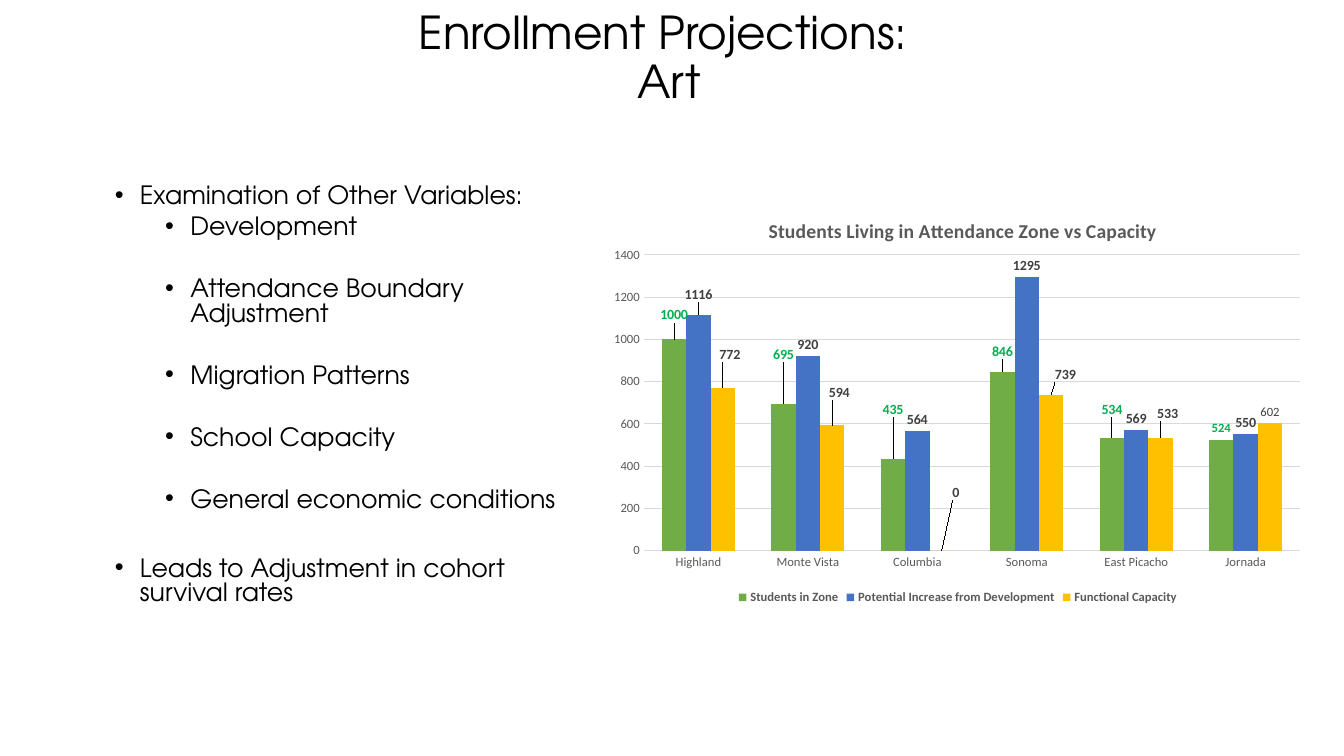
from dataclasses import dataclass

import lxml.etree
import pptx
import pptx.chart.data
import pptx.dml.color
import pptx.enum.chart
import pptx.enum.text
import pptx.oxml.ns
import pptx.util

BLACK = pptx.dml.color.RGBColor(0x00, 0x00, 0x00)
GRAY = pptx.dml.color.RGBColor(0x59, 0x59, 0x59)
DARK_GRAY = pptx.dml.color.RGBColor(0x40, 0x40, 0x40)
GRID_GRAY = pptx.dml.color.RGBColor(0xD9, 0xD9, 0xD9)
LABEL_GREEN = pptx.dml.color.RGBColor(0x00, 0xB0, 0x50)
GREEN = pptx.dml.color.RGBColor(0x70, 0xAD, 0x47)
BLUE = pptx.dml.color.RGBColor(0x44, 0x72, 0xC4)
GOLD = pptx.dml.color.RGBColor(0xFF, 0xC0, 0x00)

TEXT_FONT = "TeX Gyre Adventor"
CHART_FONT = "Calibri"
SLIDE_WIDTH = pptx.util.Inches(13.33)
SLIDE_HEIGHT = pptx.util.Inches(7.5)


@dataclass(frozen=True)
class Area:
    """A rectangle in percent of the slide's width and height."""
    left: float
    top: float
    width: float
    height: float

    def box(self) -> tuple[int, int, int, int]:
        return (int(SLIDE_WIDTH * self.left / 100), int(SLIDE_HEIGHT * self.top / 100),
                int(SLIDE_WIDTH * self.width / 100), int(SLIDE_HEIGHT * self.height / 100))


@dataclass(frozen=True)
class Bullet:
    text: str
    level: int
    space_before: float


@dataclass(frozen=True)
class ColumnSeries:
    """A series; label_shifts holds x and y shares of the chart for its first points."""
    name: str
    values: tuple[int, ...]
    color: pptx.dml.color.RGBColor
    label_color: pptx.dml.color.RGBColor
    label_size: float
    label_bold: bool
    label_shifts: tuple[tuple[float, float], ...]


TITLE_AREA = Area(3.75, 2.53, 92.12, 10.53)
BODY_AREA = Area(7.8, 23.87, 36.91, 58.27)
CHART_AREA = Area(44.71, 25.47, 53.11, 55.07)

TITLE_LINES = ("Enrollment Projections: ", "Art")
BULLETS = (
    Bullet("Examination of Other Variables:", 0, 0),
    Bullet("Development", 1, 5),
    Bullet("Attendance Boundary Adjustment", 1, 27),
    Bullet("Migration Patterns", 1, 27),
    Bullet("School Capacity", 1, 27),
    Bullet("General economic conditions", 1, 27),
    Bullet("Leads to Adjustment in cohort survival rates", 0, 32),
)
BULLET_INDENT = pptx.util.Inches(0.25)
LEVEL_INDENT = pptx.util.Inches(0.5)

SCHOOLS = ("Highland", "Monte Vista", "Columbia", "Sonoma", "East Picacho", "Jornada")
SERIES = (
    ColumnSeries("Students in Zone", (1000, 695, 435, 846, 534, 524), GREEN, LABEL_GREEN, 9, True,
                 ((0, -0.03), (0, -0.09), (0, -0.09), (0, -0.02), (0, -0.04))),
    ColumnSeries("Potential Increase from Development", (1116, 920, 564, 1295, 569, 550),
                 BLUE, DARK_GRAY, 10, True, ((0, -0.02),)),
    ColumnSeries("Functional Capacity", (772, 594, 0, 739, 533, 602), GOLD, DARK_GRAY, 9, False,
                 ((0.01, -0.05), (0.01, -0.05), (0.02, -0.11), (0.02, -0.02), (0.01, -0.03))),
)


def style_font(font, name: str, size: float, color, bold: bool = False) -> None:
    font.name = name
    font.size = pptx.util.Pt(size)
    font.bold = bold
    font.color.rgb = color


def add_text_frame(slide, area: Area, anchor):
    text_frame = slide.shapes.add_textbox(*area.box()).text_frame
    text_frame.word_wrap = True
    text_frame.vertical_anchor = anchor
    return text_frame


def add_title(slide) -> None:
    text_frame = add_text_frame(slide, TITLE_AREA, pptx.enum.text.MSO_ANCHOR.MIDDLE)
    paragraph = text_frame.paragraphs[0]
    paragraph.alignment = pptx.enum.text.PP_ALIGN.CENTER
    paragraph.line_spacing = 0.9
    for number, line in enumerate(TITLE_LINES):
        if number:
            paragraph.add_line_break()
        run = paragraph.add_run()
        run.text = line
        style_font(run.font, TEXT_FONT, 32.4, BLACK)


def add_bullets(slide) -> None:
    text_frame = add_text_frame(slide, BODY_AREA, pptx.enum.text.MSO_ANCHOR.TOP)
    for number, bullet in enumerate(BULLETS):
        paragraph = text_frame.add_paragraph() if number else text_frame.paragraphs[0]
        paragraph.level = bullet.level
        paragraph.line_spacing = 0.8
        paragraph.space_before = pptx.util.Pt(bullet.space_before)
        properties = paragraph._p.get_or_add_pPr()
        properties.set("marL", str(BULLET_INDENT + bullet.level * LEVEL_INDENT))
        properties.set("indent", str(-BULLET_INDENT))
        for tag, attribute, value in (("a:buFont", "typeface", "Arial"), ("a:buChar", "char", "•")):
            lxml.etree.SubElement(properties, pptx.oxml.ns.qn(tag)).set(attribute, value)
        run = paragraph.add_run()
        run.text = bullet.text
        style_font(run.font, TEXT_FONT, 18, BLACK)


def set_layout(element, index: int, **settings) -> None:
    """Give a chart element a manual layout, as its child at the index."""
    qn = pptx.oxml.ns.qn
    for old_layout in element.findall(qn("c:layout")):
        element.remove(old_layout)
    layout = lxml.etree.Element(qn("c:layout"))
    manual = lxml.etree.SubElement(layout, qn("c:manualLayout"))
    for name, value in settings.items():
        lxml.etree.SubElement(manual, qn(f"c:{name}")).set("val", str(value))
    element.insert(index, layout)


def style_series(series, design: ColumnSeries) -> None:
    series.format.fill.solid()
    series.format.fill.fore_color.rgb = design.color
    outside = pptx.enum.chart.XL_LABEL_POSITION.OUTSIDE_END
    labels = series.data_labels
    labels.show_value = True
    labels.position = outside
    style_font(labels.font, CHART_FONT, design.label_size, design.label_color, design.label_bold)
    for index, (x, y) in enumerate(design.label_shifts):
        label = series.points[index].data_label
        style_font(label.font, CHART_FONT, 10, design.label_color, True)
        label.position = outside
        label_element = series._element.xpath(f"c:dLbls/c:dLbl[c:idx/@val='{index}']")[0]
        set_layout(label_element, 1, x=x, y=y)


def style_axes(chart) -> None:
    for axis in (chart.category_axis, chart.value_axis):
        axis.major_tick_mark = pptx.enum.chart.XL_TICK_MARK.NONE
        axis.minor_tick_mark = pptx.enum.chart.XL_TICK_MARK.NONE
        axis.format.line.fill.background()
        style_font(axis.tick_labels.font, CHART_FONT, 9, GRAY)
    chart.value_axis.minimum_scale = 0
    chart.value_axis.maximum_scale = 1400
    chart.value_axis.major_unit = 200
    grid_line = chart.value_axis.major_gridlines.format.line
    grid_line.color.rgb = GRID_GRAY
    grid_line.width = pptx.util.Pt(0.75)


def add_enrollment_chart(slide) -> None:
    data = pptx.chart.data.CategoryChartData()
    data.categories = SCHOOLS
    for design in SERIES:
        data.add_series(design.name, design.values)
    chart = slide.shapes.add_chart(
        pptx.enum.chart.XL_CHART_TYPE.COLUMN_CLUSTERED, *CHART_AREA.box(), data).chart
    style_font(chart.font, CHART_FONT, 10, BLACK)
    plot = chart.plots[0]
    plot.gap_width = 150
    plot.overlap = 0
    plot.vary_by_categories = False
    for series, design in zip(plot.series, SERIES):
        style_series(series, design)
    style_axes(chart)

    run = chart.chart_title.text_frame.paragraphs[0].add_run()
    run.text = "Students Living in Attendance Zone vs Capacity"
    style_font(run.font, CHART_FONT, 14, GRAY, True)
    set_layout(chart.element.xpath("c:chart/c:title")[0], 1,
               xMode="edge", yMode="edge", x=0.23, y=0.05)
    set_layout(chart.element.xpath("c:chart/c:plotArea")[0], 0, layoutTarget="inner",
               xMode="edge", yMode="edge", x=0.06, y=0.15, w=0.92, h=0.71)

    chart.has_legend = True
    chart.legend.position = pptx.enum.chart.XL_LEGEND_POSITION.BOTTOM
    chart.legend.include_in_layout = False
    style_font(chart.legend.font, CHART_FONT, 9, GRAY, True)


def main() -> None:
    presentation = pptx.Presentation()
    presentation.slide_width = SLIDE_WIDTH
    presentation.slide_height = SLIDE_HEIGHT
    slide = presentation.slides.add_slide(presentation.slide_layouts[6])
    add_title(slide)
    add_bullets(slide)
    add_enrollment_chart(slide)
    presentation.save("out.pptx")


if __name__ == "__main__":
    main()
